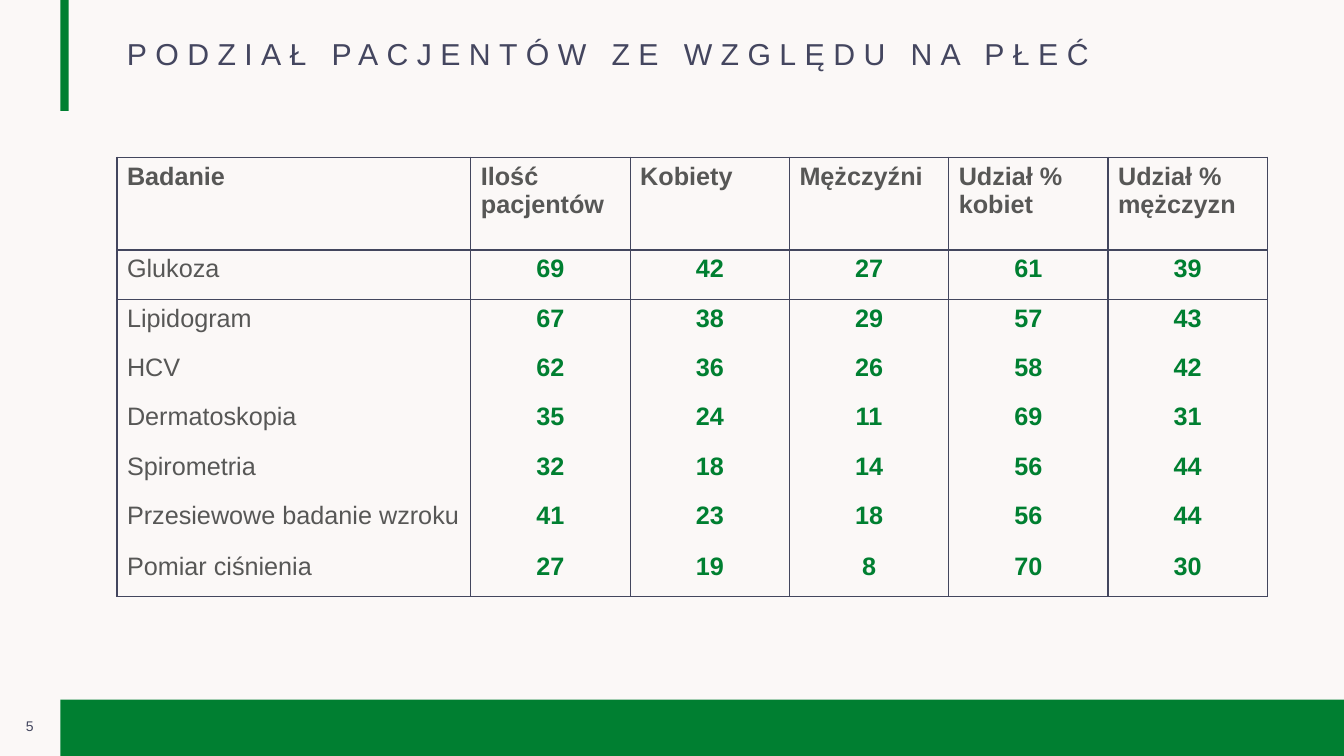
from dataclasses import dataclass

from lxml import etree
from pptx import Presentation
from pptx import util as u
from pptx.dml.color import RGBColor
from pptx.enum import shapes, text
from pptx.oxml import ns

PX = 9144  # EMU per px, 100 px to the inch
FONT = "Arial"
COLORS = {
    "background": "FBF8F7",
    "green": "007F31",
    "navy": "43465E",
    "title": "44465F",
    "gray": "575756",
}


@dataclass(frozen=True)
class Box:
    left: int
    top: int
    width: int
    height: int

    def emu(self) -> tuple[int, int, int, int]:
        return self.left * PX, self.top * PX, self.width * PX, self.height * PX


@dataclass(frozen=True)
class Exam:
    name: str
    patients: int
    women: int
    men: int
    women_pct: int
    men_pct: int

    def cells(self) -> list[str]:
        counts = (self.patients, self.women, self.men, self.women_pct, self.men_pct)
        return [self.name, *map(str, counts)]


BARS = [Box(60, 694, 1273, 56), Box(60, 0, 8, 110)]
NUMBER_BOX = Box(0, 691, 59, 59)
TITLE_BOX = Box(116, 34, 1032, 54)
TABLE_BOX = Box(116, 156, 1141, 438)
COLUMN_WIDTHS = [351] + [158] * 5
ROW_HEIGHTS = [92] + [49] * 5 + [50, 49]

HEADERS = ["Badanie", "Ilość pacjentów", "Kobiety", "Mężczyźni",
           "Udział % kobiet", "Udział % mężczyzn"]
EXAMS = [
    Exam("Glukoza", 69, 42, 27, 61, 39),
    Exam("Lipidogram", 67, 38, 29, 57, 43),
    Exam("HCV", 62, 36, 26, 58, 42),
    Exam("Dermatoskopia", 35, 24, 11, 69, 31),
    Exam("Spirometria", 32, 18, 14, 56, 44),
    Exam("Przesiewowe badanie wzroku", 41, 23, 18, 56, 44),
    Exam("Pomiar ciśnienia", 27, 19, 8, 70, 30),
]


def rgb(name: str) -> RGBColor:
    return RGBColor.from_string(COLORS[name])


def write(tf, content: str, *, size: float, color: str, bold: bool = False,
          centered: bool = False, line_spacing: float = 1.0, tracking: int = 0) -> None:
    """Fill a text frame with one formatted run; tracking is in points."""
    tf.word_wrap = True
    p = tf.paragraphs[0]
    p.alignment = text.PP_ALIGN.CENTER if centered else text.PP_ALIGN.LEFT
    p.line_spacing = line_spacing
    r = p.add_run()
    r.text = content
    r.font.name = FONT
    r.font.size = u.Pt(size)
    r.font.bold = bold
    r.font.color.rgb = rgb(color)
    if tracking:
        r.font._element.set("spc", str(tracking * 100))


def add_bar(s, box: Box) -> None:
    sp = s.shapes.add_shape(shapes.MSO_SHAPE.RECTANGLE, *box.emu())
    sp.shadow.inherit = False
    sp.fill.solid()
    sp.fill.fore_color.rgb = rgb("green")
    sp.line.fill.background()


def set_borders(cell, sides: str) -> None:
    """Draw the sides named by letters L, R, T, B and clear the others."""
    tc_pr = cell._tc.get_or_add_tcPr()
    for side in "LRTB":
        ln = etree.SubElement(tc_pr, ns.qn(f"a:ln{side}"), w=str(u.Pt(1)))
        if side in sides:
            fill = etree.SubElement(ln, ns.qn("a:solidFill"))
            etree.SubElement(fill, ns.qn("a:srgbClr"), val=COLORS["navy"])
        else:
            etree.SubElement(ln, ns.qn("a:noFill"))


def add_exam_table(s) -> None:
    rows = [HEADERS] + [exam.cells() for exam in EXAMS]
    frame = s.shapes.add_table(len(rows), len(HEADERS), *TABLE_BOX.emu())
    table = frame.table
    table.first_row = table.horz_banding = False
    for column, width in zip(table.columns, COLUMN_WIDTHS):
        column.width = width * PX
    for row, height in zip(table.rows, ROW_HEIGHTS):
        row.height = height * PX

    last = len(rows) - 1
    for i, row in enumerate(rows):
        sides = "LR" + ("T" if i <= 2 else "") + ("B" if i in (0, 1, last) else "")
        for j, value in enumerate(row):
            cell = table.cell(i, j)
            set_borders(cell, sides)
            cell.fill.background()
            is_count = i > 0 and j > 0
            write(cell.text_frame, value, size=18, centered=is_count,
                  color="green" if is_count else "gray", bold=i == 0 or j > 0)


def main() -> None:
    prs = Presentation()
    prs.slide_width, prs.slide_height = 1333 * PX, 750 * PX
    s = prs.slides.add_slide(prs.slide_layouts[6])
    s.background.fill.solid()
    s.background.fill.fore_color.rgb = rgb("background")

    for bar in BARS:
        add_bar(s, bar)

    number = s.shapes.add_textbox(*NUMBER_BOX.emu()).text_frame
    number.vertical_anchor = text.MSO_ANCHOR.MIDDLE
    write(number, "5", size=10, color="navy", centered=True)

    title = s.shapes.add_textbox(*TITLE_BOX.emu()).text_frame
    write(title, "PODZIAŁ PACJENTÓW ZE WZGLĘDU NA PŁEĆ", size=21.6,
          color="title", line_spacing=0.9, tracking=6)

    add_exam_table(s)
    prs.save("out.pptx")


if __name__ == "__main__":
    main()
